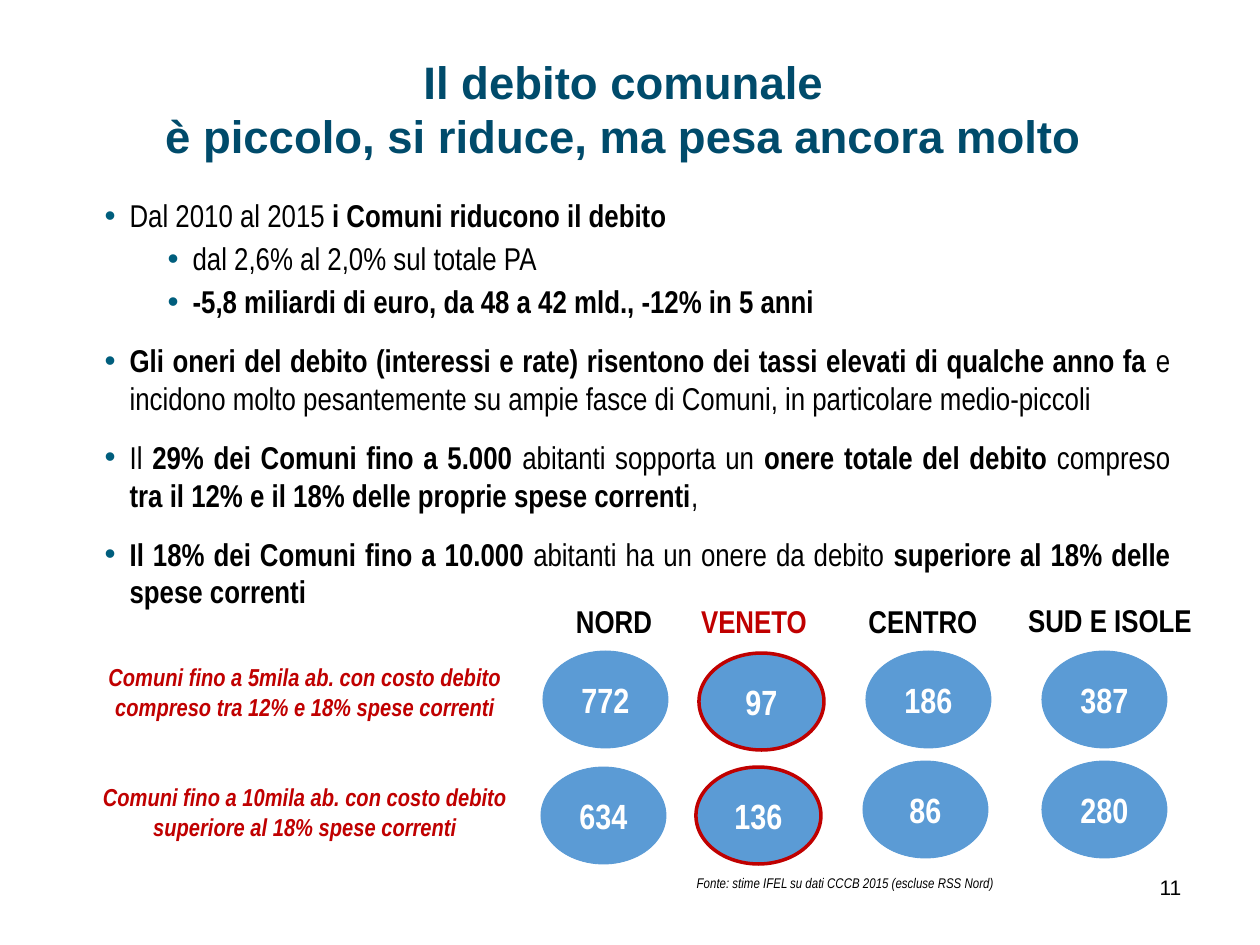
"""Build the slide on municipal debt with bullets and a grid of counts by area."""
from dataclasses import dataclass

from lxml.etree import SubElement
from pptx import Presentation
from pptx.dml.color import RGBColor
from pptx.enum.shapes import MSO_SHAPE as Shape
from pptx.enum.text import MSO_ANCHOR as Anchor, MSO_AUTO_SIZE as AutoSize, PP_ALIGN as Align
from pptx.oxml.ns import qn
from pptx.util import Emu, Pt


@dataclass(frozen=True)
class Theme:
    heading_font: str = "Arial"
    text_font: str = "Arial Narrow"
    heading: str = "004B6B"
    bullet: str = "005E7D"
    ink: str = "000000"
    paper: str = "FFFFFF"
    accent: str = "C00000"
    disc: str = "5B9BD5"
    title_size: int = 26
    title_leading: int = 31
    count_size: int = 20
    body_size: int = 18
    caption_size: int = 14
    number_size: int = 12
    source_size: int = 8


THEME = Theme()
EMU_PER_PX = 914400 / 126

TITLE = "Il debito comunale\vè piccolo, si riduce, ma pesa ancora molto"
BULLETS = [
    (0, 0, "Dal 2010 al 2015 *i Comuni riducono il debito*"),
    (1, 0, "dal 2,6% al 2,0% sul totale PA"),
    (1, 0, "*-5,8 miliardi di euro, da 48 a 42 mld., -12% in 5 anni*"),
    (0, 9, "*Gli oneri del debito (interessi e rate) risentono dei tassi elevati di qualche anno fa* "
           "e incidono molto pesantemente su ampie fasce di Comuni, in particolare medio-piccoli"),
    (0, 9, "Il *29% dei Comuni fino a 5.000* abitanti sopporta un *onere totale del debito* "
           "compreso *tra il 12% e il 18% delle proprie spese correnti*,"),
    (0, 9, "*Il 18% dei Comuni fino a 10.000* abitanti ha un onere da debito "
           "*superiore al 18% delle spese correnti*"),
]
CAPTIONS = [
    (656, "Comuni fino a 5mila ab. con costo debito\ncompreso tra 12% e 18% spese correnti"),
    (776, "Comuni fino a 10mila ab. con costo debito\nsuperiore al 18% spese correnti"),
]
AREAS = [
    ("NORD", 614, 596, False, [("772", 543, 651), ("634", 541, 767)]),
    ("VENETO", 754, 596, True, [("97", 699, 653), ("136", 696, 767)]),
    ("CENTRO", 923, 596, False, [("186", 866, 651), ("86", 863, 761)]),
    ("SUD E ISOLE", 1110, 595, False, [("387", 1042, 651), ("280", 1042, 761)]),
]
SOURCE = "Fonte: stime IFEL su dati CCCB 2015 (escluse RSS Nord)"
PAGE_NUMBER = "11"
LABEL_WIDTH, LABEL_HEIGHT = 216, 50
DISC_WIDTH, DISC_HEIGHT = 125, 97


def px(*lengths):
    return [Emu(round(length * EMU_PER_PX)) for length in lengths]


def rgb(code):
    return RGBColor.from_string(code)


def place(box, *frame):
    box.left, box.top, box.width, box.height = px(*frame)


def write(para, text, size, color=THEME.ink, font=THEME.text_font, bold=False, italic=False,
          align=Align.CENTER, before=0, after=0, leading=None):
    """Fill a paragraph; asterisks enclose bold words and a vertical tab breaks the line."""
    para.alignment = align
    para.space_before, para.space_after = Pt(before), Pt(after)
    if leading:
        para.line_spacing = Pt(leading)
    for part, words in enumerate(text.split("*")):
        for row, line in enumerate(words.split("\v")):
            if row:
                para.add_line_break()
            if line:
                span = para.add_run()
                span.text = line
                span.font.name, span.font.size = font, Pt(size)
                span.font.bold, span.font.italic = bold or part % 2 == 1, italic
                span.font.color.rgb = rgb(color)


def prepare(box, anchor=Anchor.TOP):
    frame = box.text_frame
    frame.auto_size = AutoSize.NONE
    frame.word_wrap = True
    frame.vertical_anchor = anchor
    return frame


def add_text(page, text, frame, **style):
    box = prepare(page.shapes.add_textbox(*px(*frame)))
    for index, line in enumerate(text.split("\n")):
        write(box.add_paragraph() if index else box.paragraphs[0], line, **style)


def add_bullet(para, level):
    para.level = level
    props = para._p.get_or_add_pPr()
    indent = px(25)[0]
    props.set("marL", str(px(88 if level else 25)[0]))
    props.set("indent", str(-indent))
    SubElement(SubElement(props, qn("a:buClr")), qn("a:srgbClr"), val=THEME.bullet)
    SubElement(props, qn("a:buFont"), typeface=THEME.heading_font)
    SubElement(props, qn("a:buChar"), char="•")


def add_disc(page, count, left, top, marked):
    disc = page.shapes.add_shape(Shape.OVAL, *px(left, top, DISC_WIDTH, DISC_HEIGHT))
    disc.shadow.inherit = False
    disc.fill.solid()
    disc.fill.fore_color.rgb = rgb(THEME.disc)
    disc.line.color.rgb = rgb(THEME.accent if marked else THEME.disc)
    disc.line.width = Pt(2 if marked else 0.5)
    para = prepare(disc, Anchor.MIDDLE).paragraphs[0]
    write(para, count, THEME.count_size, color=THEME.paper, bold=True)


def main():
    deck = Presentation()
    deck.slide_width, deck.slide_height = px(1260, 945)
    page = deck.slides.add_slide(deck.slide_layouts[1])
    title, body = page.placeholders

    place(title, 110, 48, 1027, 122)
    write(prepare(title).paragraphs[0], TITLE, THEME.title_size, color=THEME.heading,
          font=THEME.heading_font, bold=True, leading=THEME.title_leading)

    place(body, 92, 190, 1091, 431)
    frame = prepare(body)
    for index, (level, before, text) in enumerate(BULLETS):
        para = frame.add_paragraph() if index else frame.paragraphs[0]
        add_bullet(para, level)
        write(para, text, THEME.body_size, align=Align.JUSTIFY, before=before, after=3)

    for top, text in CAPTIONS:
        add_text(page, text, (85, top, 440, 72), size=THEME.caption_size,
                 color=THEME.accent, bold=True, italic=True)

    for name, center, top, marked, counts in AREAS:
        add_text(page, name, (center - LABEL_WIDTH // 2, top, LABEL_WIDTH, LABEL_HEIGHT),
                 size=THEME.body_size, color=THEME.accent if marked else THEME.ink, bold=True)
        for count, left, disc_top in counts:
            add_disc(page, count, left, disc_top, marked)

    add_text(page, SOURCE, (577, 868, 537, 30), size=THEME.source_size, italic=True)
    add_text(page, PAGE_NUMBER, (1120, 868, 101, 63), size=THEME.number_size,
             font=THEME.heading_font)
    deck.save("out.pptx")


if __name__ == "__main__":
    main()
